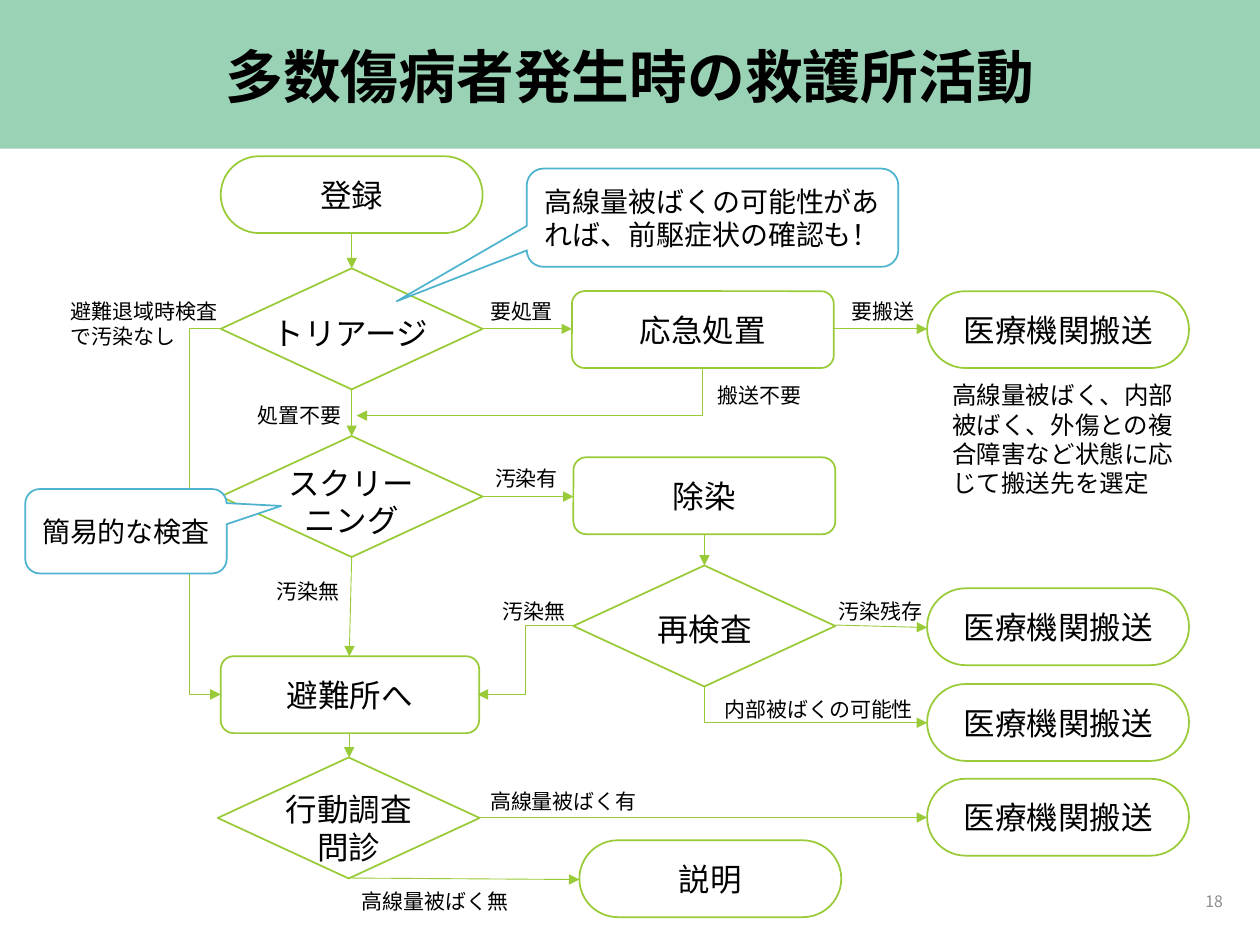
from dataclasses import dataclass
from typing import Any, Optional

from lxml import etree
from pptx import Presentation
from pptx.dml.color import RGBColor
from pptx.enum.shapes import MSO_CONNECTOR, MSO_SHAPE
from pptx.enum.text import MSO_ANCHOR, PP_ALIGN
from pptx.oxml.ns import qn
from pptx.util import Cm, Pt

RECTANGLE = MSO_SHAPE.RECTANGLE
ROUNDED = MSO_SHAPE.ROUNDED_RECTANGLE
DIAMOND = MSO_SHAPE.DIAMOND
CALLOUT = MSO_SHAPE.ROUNDED_RECTANGULAR_CALLOUT
STRAIGHT, ELBOW = MSO_CONNECTOR.STRAIGHT, MSO_CONNECTOR.ELBOW
LEFT, CENTER, RIGHT = PP_ALIGN.LEFT, PP_ALIGN.CENTER, PP_ALIGN.RIGHT
TOP, MIDDLE = MSO_ANCHOR.TOP, MSO_ANCHOR.MIDDLE

FONT = "Noto Sans CJK JP"
BLACK, WHITE, GRAY = "000000", "FFFFFF", "8C8C8C"
BANNER, GREEN, BLUE = "37A76F", "99CB38", "4EB3CF"
NODE_WIDTH, BOX_HEIGHT, DIAMOND_HEIGHT = 5.28, 1.55, 2.44
LEFT_COLUMN, MIDDLE_COLUMN, RIGHT_COLUMN = 4.45, 11.56, 18.69
LEFT_AXIS, MIDDLE_AXIS, SHELTER_AXIS = 7.09, 14.2, 7.04
PILL, CORNER = (0.5,), (0.167,)


@dataclass(frozen=True)
class Node:
    text: str
    left: float
    top: float
    width: float = NODE_WIDTH
    height: float = BOX_HEIGHT
    kind: Any = ROUNDED
    adjustments: tuple[float, ...] = CORNER
    line: str = GREEN
    size: int = 18


@dataclass(frozen=True)
class Label:
    text: str
    left: float
    top: float
    width: float
    height: float = 0.77
    size: int = 12
    align: Any = LEFT
    anchor: Any = TOP
    color: str = BLACK
    bold: bool = False
    spacing: float = 1.0
    wrap: bool = False


@dataclass(frozen=True)
class Link:
    begin: tuple[float, float]
    end: tuple[float, float]
    bend: Optional[float] = None
    corner: bool = False


NODES = [
    Node("登録", LEFT_COLUMN, 3.15, adjustments=PILL),
    Node("応急処置", 11.53, 5.87),
    Node("除染", MIDDLE_COLUMN, 9.22),
    Node("避難所へ", LEFT_COLUMN, 13.23, 5.21),
    Node("説明", 11.68, 16.94, adjustments=PILL),
    *[Node("医療機関搬送", RIGHT_COLUMN, top, adjustments=PILL)
      for top in (5.87, 11.86, 13.79, 15.7)],
    *[Node("", left, top, height=DIAMOND_HEIGHT, kind=DIAMOND, adjustments=())
      for left, top in ((LEFT_COLUMN, 5.41), (LEFT_COLUMN, 8.79),
                        (MIDDLE_COLUMN, 11.4), (4.39, 15.27))],
]

LINKS = [
    Link((LEFT_AXIS, 4.7), (LEFT_AXIS, 5.41)),
    Link((LEFT_AXIS, 7.85), (LEFT_AXIS, 8.79)),
    Link((LEFT_AXIS, 11.2), (SHELTER_AXIS, 13.23)),
    Link((SHELTER_AXIS, 14.78), (SHELTER_AXIS, 15.27)),
    Link((MIDDLE_AXIS, 10.77), (MIDDLE_AXIS, 11.4)),
    Link((9.73, 6.63), (11.53, 6.63)),
    Link((9.73, 10.01), (11.56, 10.01)),
    Link((16.81, 6.63), (RIGHT_COLUMN, 6.63)),
    Link((16.84, 12.6), (RIGHT_COLUMN, 12.65)),
    Link((9.68, 16.48), (RIGHT_COLUMN, 16.48)),
    Link((SHELTER_AXIS, 17.7), (11.68, 17.73)),
    Link((4.47, 6.63), (4.45, 14.0), bend=3.83),
    Link((11.56, 12.6), (9.63, 14.0), bend=10.59),
    Link((14.17, 7.4), (7.19, 8.38), corner=True),
    Link((MIDDLE_AXIS, 13.82), (RIGHT_COLUMN, 14.57), corner=True),
]

LABELS = [
    Label("多数傷病者発生時の救護所活動", 1.75, 0.53, 21.89, 2.16, 33, CENTER, MIDDLE,
          bold=True, spacing=0.9, wrap=True),
    Label("トリアージ", 5.21, 6.2, 3.71, 1.02, 18, CENTER),
    Label("スクリーニング", 5.41, 9.22, 3.35, 1.8, 18, CENTER, wrap=True),
    Label("再検査", 12.98, 12.17, 2.44, 1.02, 18, CENTER),
    Label("行動調査\n問診", 5.36, 15.8, 3.35, 1.8, 18, CENTER, wrap=True),
    Label("要処置", 9.63, 5.89, 1.8),
    Label("要搬送", 16.92, 5.89, 1.8),
    Label("処置不要", 4.95, 8.0, 2.24),
    Label("搬送不要", 14.22, 7.59, 2.24),
    Label("汚染有", 9.73, 9.27, 1.8),
    Label("汚染無", 5.33, 11.53, 1.8),
    Label("汚染無", 9.88, 11.94, 1.8),
    Label("汚染残存", 16.66, 11.94, 2.24),
    Label("高線量被ばく有", 9.63, 15.77, 3.51),
    Label("高線量被ばく無", 7.04, 17.78, 3.51),
    Label("内部被ばくの可能性", 14.35, 13.92, 4.37),
    Label("避難退域時検査で汚染なし", 1.17, 5.89, 3.78, 1.27, wrap=True),
    Label("高線量被ばく、内部被ばく、外傷との複合障害など状態に応じて搬送先を選定",
          18.95, 7.54, 5.44, 2.64, 14, wrap=True),
    Label("18", 19.18, 17.65, 5.72, 1.02, 9, RIGHT, MIDDLE, GRAY, wrap=True),
]

CALLOUTS = [
    Node("高線量被ばくの可能性があれば、前駆症状の確認も！", 10.62, 3.4, 7.49, 1.98,
         CALLOUT, (-0.85, 0.85, 0.17), BLUE, 16),
    Node("簡易的な検査", 0.51, 9.86, 4.06, 1.7,
         CALLOUT, (0.77, -0.3, 0.17), BLUE, 16),
]


def color_of(value: str) -> RGBColor:
    return RGBColor.from_string(value)


def apply_formats(target: Any, formats: dict[str, Any]) -> None:
    for name, value in formats.items():
        setattr(target, name, value)


def write_text(shape: Any, text: str, size: int, align: Any = CENTER, anchor: Any = MIDDLE,
               color: str = BLACK, bold: bool = False, spacing: float = 1.0,
               wrap: bool = True) -> None:
    frame = shape.text_frame
    apply_formats(frame, {"text": text, "word_wrap": wrap, "vertical_anchor": anchor})
    for paragraph in frame.paragraphs:
        apply_formats(paragraph, {"alignment": align, "line_spacing": spacing})
        for run in paragraph.runs:
            apply_formats(run.font, {"name": FONT, "size": Pt(size), "bold": bold})
            run.font.color.rgb = color_of(color)
            east_asian = etree.SubElement(run.font._element, qn("a:ea"))
            east_asian.set("typeface", FONT)


def draw_banner(slide: Any) -> None:
    shape = slide.shapes.add_shape(RECTANGLE, 0, 0, Cm(25.4), Cm(3))
    shape.shadow.inherit = False
    shape.fill.solid()
    shape.fill.fore_color.rgb = color_of(BANNER)
    shape.line.fill.background()
    color = shape._element.spPr.find(f"{qn('a:solidFill')}/{qn('a:srgbClr')}")
    etree.SubElement(color, qn("a:alpha")).set("val", "50000")


def draw_node(slide: Any, node: Node) -> None:
    shape = slide.shapes.add_shape(node.kind, Cm(node.left), Cm(node.top),
                                   Cm(node.width), Cm(node.height))
    shape.shadow.inherit = False
    for index, value in enumerate(node.adjustments):
        shape.adjustments[index] = value
    shape.fill.solid()
    shape.fill.fore_color.rgb = color_of(WHITE)
    shape.line.color.rgb = color_of(node.line)
    shape.line.width = Pt(1)
    if node.text:
        write_text(shape, node.text, node.size)


def draw_label(slide: Any, label: Label) -> None:
    shape = slide.shapes.add_textbox(Cm(label.left), Cm(label.top),
                                     Cm(label.width), Cm(label.height))
    write_text(shape, label.text, label.size, label.align, label.anchor,
               label.color, label.bold, label.spacing, label.wrap)


def draw_link(slide: Any, link: Link) -> None:
    (x1, y1), (x2, y2) = link.begin, link.end
    direction = 1 if x2 > x1 else -1
    if link.corner:
        center_x, center_y = (x1 + x2) / 2, (y1 + y2) / 2
        half_width, half_height = direction * (y2 - y1) / 2, abs(x2 - x1) / 2
        x1, x2 = center_x + half_width, center_x - half_width
        y1, y2 = center_y - half_height, center_y + half_height
    kind = ELBOW if link.corner or link.bend is not None else STRAIGHT
    connector = slide.shapes.add_connector(kind, Cm(x1), Cm(y1), Cm(x2), Cm(y2))
    connector.line.color.rgb = color_of(GREEN)
    connector.line.width = Pt(0.5)
    properties = connector._element.spPr
    etree.SubElement(properties.find(qn("a:ln")), qn("a:tailEnd")).set("type", "triangle")
    etree.SubElement(properties, qn("a:effectLst"))
    geometry = properties.find(qn("a:prstGeom"))
    if link.corner:
        geometry.set("prst", "bentConnector2")
        properties.find(qn("a:xfrm")).set("rot", str((180 + 90 * direction) * 60000))
    elif link.bend is not None:
        ratio = round((link.bend - x1) / (x2 - x1) * 100000)
        guide = etree.SubElement(geometry.find(qn("a:avLst")), qn("a:gd"))
        guide.set("name", "adj1")
        guide.set("fmla", f"val {ratio}")


def main() -> None:
    presentation = Presentation()
    apply_formats(presentation, {"slide_width": Cm(25.4), "slide_height": Cm(19.05)})
    slide = presentation.slides.add_slide(presentation.slide_layouts[6])
    draw_banner(slide)
    for items, draw in ((NODES, draw_node), (LINKS, draw_link),
                        (LABELS, draw_label), (CALLOUTS, draw_node)):
        for item in items:
            draw(slide, item)
    presentation.save("out.pptx")


if __name__ == "__main__":
    main()
